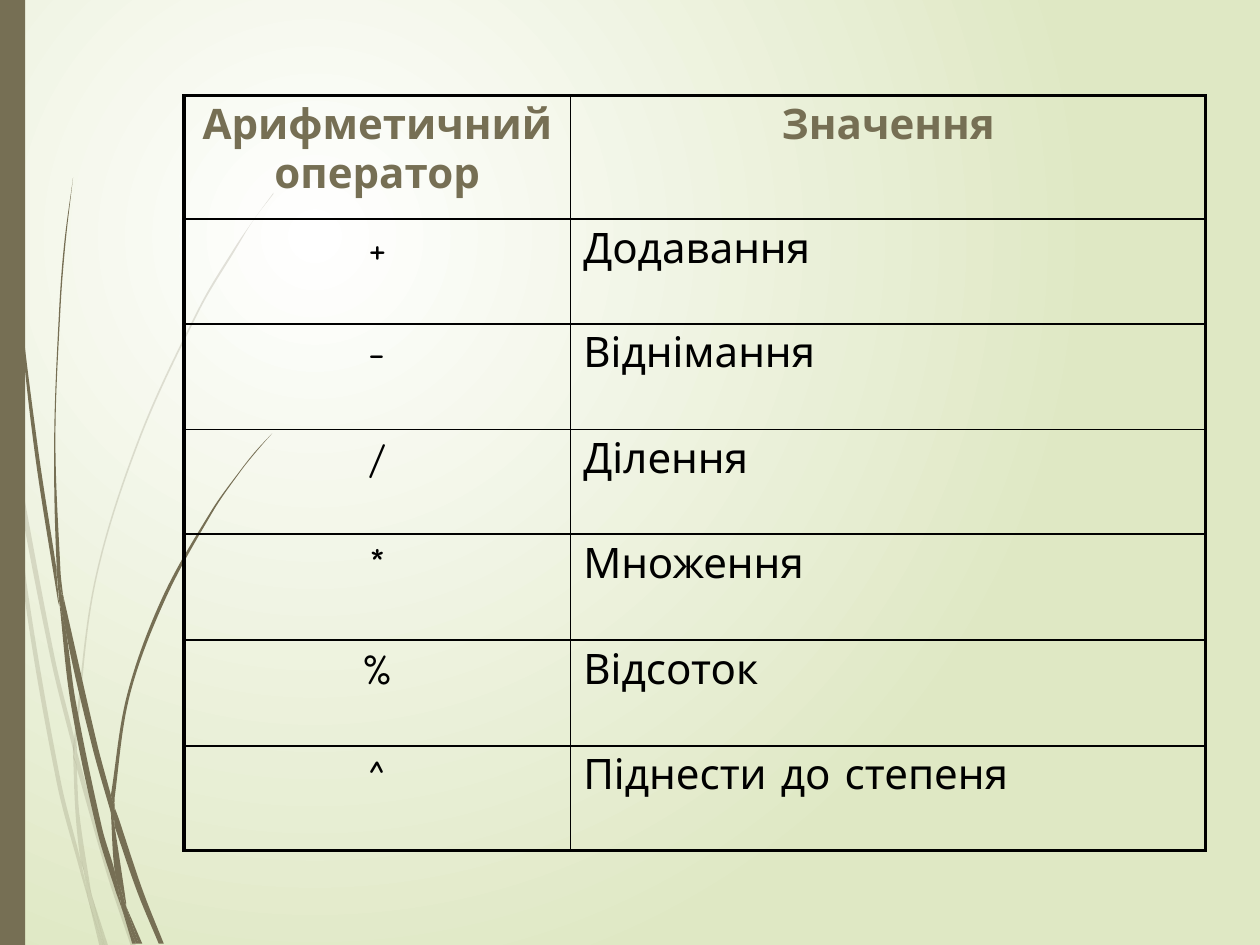
from math import dist

from lxml.etree import SubElement
from pptx import Presentation
from pptx.dml.color import RGBColor
from pptx.enum.shapes import MSO_SHAPE
from pptx.enum.text import PP_ALIGN
from pptx.oxml.ns import qn
from pptx.util import Inches, Pt

BROWN = RGBColor(0x76, 0x6F, 0x54)
BLACK = RGBColor(0, 0, 0)
WHITE = RGBColor(255, 255, 255)
PALE_GREEN = RGBColor(0xDF, 0xE8, 0xC4)
FONT = "Comic Neue"

ROWS = [
    ("Арифметичний оператор", "Значення"),
    ("+", "Додавання"),
    ("-", "Віднімання"),
    ("/", "Ділення"),
    ("*", "Множення"),
    ("%", "Відсоток"),
    ("^", "Піднести до степеня"),
]
TABLE_LEFT, TABLE_TOP = 1.46, 0.76
COLUMN_WIDTHS = (3.07, 5.04)
ROW_HEIGHTS = (0.98, 0.83, 0.84, 0.83, 0.84, 0.84, 0.83)
THICK, THIN = 2.25, 1

# Each blade of grass is a pair of smooth edges, there and back, in inches.
PALE_BLADES = [
    ([(0.08, 3.5), (0.06, 3.22), (0, 2.82)], [(0, 2.99), (0.07, 3.44), (0.08, 3.5)]),
    ([(0.1, 3.45), (0.43, 5.2), (0.59, 5.86)],
     [(0.59, 5.99), (0.4, 5.22), (0.12, 3.76), (0.1, 3.45)]),
    ([(0.61, 5.96), (0.64, 6.07), (0.88, 6.92), (1.08, 7.51)],
     [(1.04, 7.51), (0.85, 6.94), (0.61, 6.1)]),
    ([(0.73, 7.11), (0.86, 7.51)], [(0.83, 7.51), (0.73, 7.11)]),
    ([(0.08, 3.5), (0.12, 3.76), (0.22, 4.69), (0.48, 6.19), (0.64, 6.83),
      (0.69, 7.07), (0.7, 7.14)],
     [(0.64, 6.93), (0.45, 6.21), (0.19, 4.7), (0.08, 3.5)]),
    ([(0.58, 5.99), (0.61, 6.08), (0.61, 6.1), (0.63, 6.46), (0.72, 7.06), (0.73, 7.11)],
     [(0.67, 6.92), (0.64, 6.83), (0.6, 6.46), (0.58, 5.99)]),
    ([(2.17, 1.53), (2.01, 1.75), (1.86, 1.97), (1.58, 2.44), (1.1, 3.48),
      (0.75, 4.61), (0.59, 5.84), (0.59, 5.86)],
     [(0.61, 5.96), (0.61, 5.84), (0.76, 4.62), (1.11, 3.49), (1.59, 2.45),
      (1.87, 1.98), (2.01, 1.75), (2.17, 1.54)]),
    ([(0.7, 7.14), (0.82, 7.51)], [(0.79, 7.51), (0.7, 7.14)]),
    ([(0.59, 5.86), (0.61, 5.96), (0.61, 6.1)], [(0.61, 6.08), (0.58, 5.99), (0.59, 5.86)]),
    ([(0.65, 6.83), (0.67, 6.92), (0.73, 7.11), (0.83, 7.51)],
     [(0.82, 7.51), (0.7, 7.14), (0.69, 7.07), (0.65, 6.83)]),
]
DARK_BLADES = [
    ([(0.02, 0), (0.03, 0.48), (0.05, 1.1), (0.14, 2.33), (0.27, 3.55),
      (0.46, 4.77), (0.47, 4.81)],
     [(0.45, 4.57), (0.45, 4.53), (0.3, 3.55), (0.15, 2.32), (0.06, 1.09),
      (0.04, 0.48), (0.03, 0)]),
    ([(0.5, 4.72), (0.77, 5.9), (0.88, 6.31)],
     [(0.88, 6.45), (0.73, 5.92), (0.53, 5.05), (0.5, 4.72)]),
    ([(0.91, 6.41), (0.94, 6.49), (1.13, 7.06), (1.3, 7.49)],
     [(1.26, 7.49), (1.09, 7.08), (0.91, 6.56)]),
    ([(0.47, 4.77), (0.53, 5.05), (0.6, 5.56), (0.81, 6.57), (0.91, 6.91),
      (0.96, 7.17), (0.97, 7.22)],
     [(0.92, 7.08), (0.77, 6.59), (0.56, 5.57), (0.47, 4.77)]),
    ([(0.58, 1.41), (0.51, 1.93), (0.47, 2.45), (0.43, 3.49), (0.45, 4.49), (0.49, 4.72)],
     [(0.5, 4.72), (0.48, 4.53), (0.44, 3.49), (0.48, 2.45), (0.52, 1.93), (0.58, 1.41)]),
    ([(1, 7.19), (1.13, 7.49)], [(1.1, 7.49), (1, 7.19)]),
    ([(0.45, 4.49), (0.49, 4.72), (0.5, 4.72), (0.53, 5.05)],
     [(0.47, 4.77), (0.45, 4.53), (0.45, 4.49)]),
    ([(2.16, 3.44), (2.03, 3.58), (1.91, 3.73), (1.68, 4.05), (1.29, 4.74),
      (1.01, 5.51), (0.88, 6.31)],
     [(0.91, 6.41), (0.91, 6.33), (1.03, 5.52), (1.31, 4.76), (1.69, 4.06),
      (1.91, 3.74), (2.03, 3.59), (2.16, 3.44)]),
    ([(0.97, 7.22), (1.08, 7.49)], [(1.05, 7.49), (0.97, 7.22)]),
    ([(0.88, 6.45), (0.9, 6.51), (0.91, 6.56), (1, 7.16), (1, 7.19)],
     [(0.96, 7.06), (0.91, 6.91), (0.88, 6.45)]),
    ([(0.88, 6.31), (0.91, 6.41), (0.91, 6.56)], [(0.9, 6.51), (0.88, 6.45), (0.88, 6.31)]),
    ([(0.91, 6.91), (0.96, 7.06), (1, 7.19), (1.1, 7.49)],
     [(1.08, 7.49), (0.97, 7.22), (0.96, 7.17), (0.91, 6.91)]),
]


def control_point(start, before, after, length):
    """Point a third of length from start, in the direction before to after."""
    reach = length / 3 / (dist(before, after) or 1)
    return tuple(round(start[i] + reach * (after[i] - before[i])) for i in (0, 1))


def bend(shape, edges):
    """Turn the straight segments along each edge into Bezier curves."""
    segments = iter(shape._element.findall(".//" + qn("a:lnTo")))
    left, top = shape.left, shape.top
    for number, edge in enumerate(edges):
        if number:
            next(segments)
        points = [(Inches(x) - left, Inches(y) - top) for x, y in edge]
        padded = [points[0], *points, points[-1]]
        for a, b, c, d in zip(padded, padded[1:], padded[2:], padded[3:]):
            segment = next(segments)
            length = dist(b, c)
            curve = SubElement(segment.getparent(), qn("a:cubicBezTo"))
            for x, y in (control_point(b, a, c, length), control_point(c, d, b, length), c):
                SubElement(curve, qn("a:pt"), x=str(x), y=str(y))
            segment.getparent().replace(segment, curve)


def paint(shape, opacity=100):
    shape.shadow.inherit = False
    shape.fill.solid()
    shape.fill.fore_color.rgb = BROWN
    shape.line.fill.background()
    if opacity < 100:
        color = shape._element.spPr.find(qn("a:solidFill"))[0]
        SubElement(color, qn("a:alpha"), val=str(opacity * 1000))


def add_grass(slide, blades, opacity):
    group = slide.shapes.add_group_shape()
    for edges in blades:
        outline = [(Inches(x), Inches(y)) for edge in edges for x, y in edge]
        builder = group.shapes.build_freeform(*outline[0])
        builder.add_line_segments(outline[1:], close=True)
        blade = builder.convert_to_shape()
        bend(blade, edges)
        paint(blade, opacity)


def set_background(slide):
    fill = slide.background.fill
    fill.gradient()
    for stop, color, position in zip(fill.gradient_stops, (WHITE, PALE_GREEN), (0, 1)):
        stop.color.rgb = color
        stop.position = position
    gradient = slide.element.find(".//" + qn("a:gradFill"))
    gradient.remove(gradient.find(qn("a:lin")))
    path = SubElement(gradient, qn("a:path"), path="circle")
    SubElement(path, qn("a:fillToRect"), l="50000", t="50000", r="100000", b="100000")


def add_border(cell, side, width):
    line = SubElement(cell._tc.get_or_add_tcPr(), qn("a:ln" + side), w=str(Pt(width)))
    SubElement(SubElement(line, qn("a:solidFill")), qn("a:srgbClr"), val=str(BLACK))


def add_operator_table(slide):
    table = slide.shapes.add_table(
        len(ROWS), len(COLUMN_WIDTHS), Inches(TABLE_LEFT), Inches(TABLE_TOP),
        Inches(sum(COLUMN_WIDTHS)), Inches(sum(ROW_HEIGHTS))).table
    table.first_row = table.horz_banding = False
    for column, width in zip(table.columns, COLUMN_WIDTHS):
        column.width = Inches(width)
    last_row, last_column = len(ROWS) - 1, len(COLUMN_WIDTHS) - 1
    for r, texts in enumerate(ROWS):
        table.rows[r].height = Inches(ROW_HEIGHTS[r])
        for c, text in enumerate(texts):
            cell = table.cell(r, c)
            outer = {"L": c == 0, "R": c == last_column, "T": r == 0, "B": r == last_row}
            for side, is_outer in outer.items():
                add_border(cell, side, THICK if is_outer else THIN)
            cell.fill.background()
            paragraph = cell.text_frame.paragraphs[0]
            paragraph.alignment = PP_ALIGN.CENTER if r == 0 or c == 0 else PP_ALIGN.LEFT
            paragraph.space_before = Pt(4.8)
            run = paragraph.add_run()
            run.text = text
            run.font.name, run.font.size, run.font.bold = FONT, Pt(24), r == 0
            run.font.color.rgb = BROWN if r == 0 else BLACK


def main():
    presentation = Presentation()
    presentation.slide_width, presentation.slide_height = Inches(10), Inches(7.5)
    slide = presentation.slides.add_slide(presentation.slide_layouts[6])
    set_background(slide)
    add_grass(slide, PALE_BLADES, 20)
    add_grass(slide, DARK_BLADES, 100)
    side_bar = slide.shapes.add_shape(
        MSO_SHAPE.RECTANGLE, 0, 0, Inches(0.2), presentation.slide_height)
    paint(side_bar)
    add_operator_table(slide)
    presentation.save("out.pptx")


if __name__ == "__main__":
    main()
